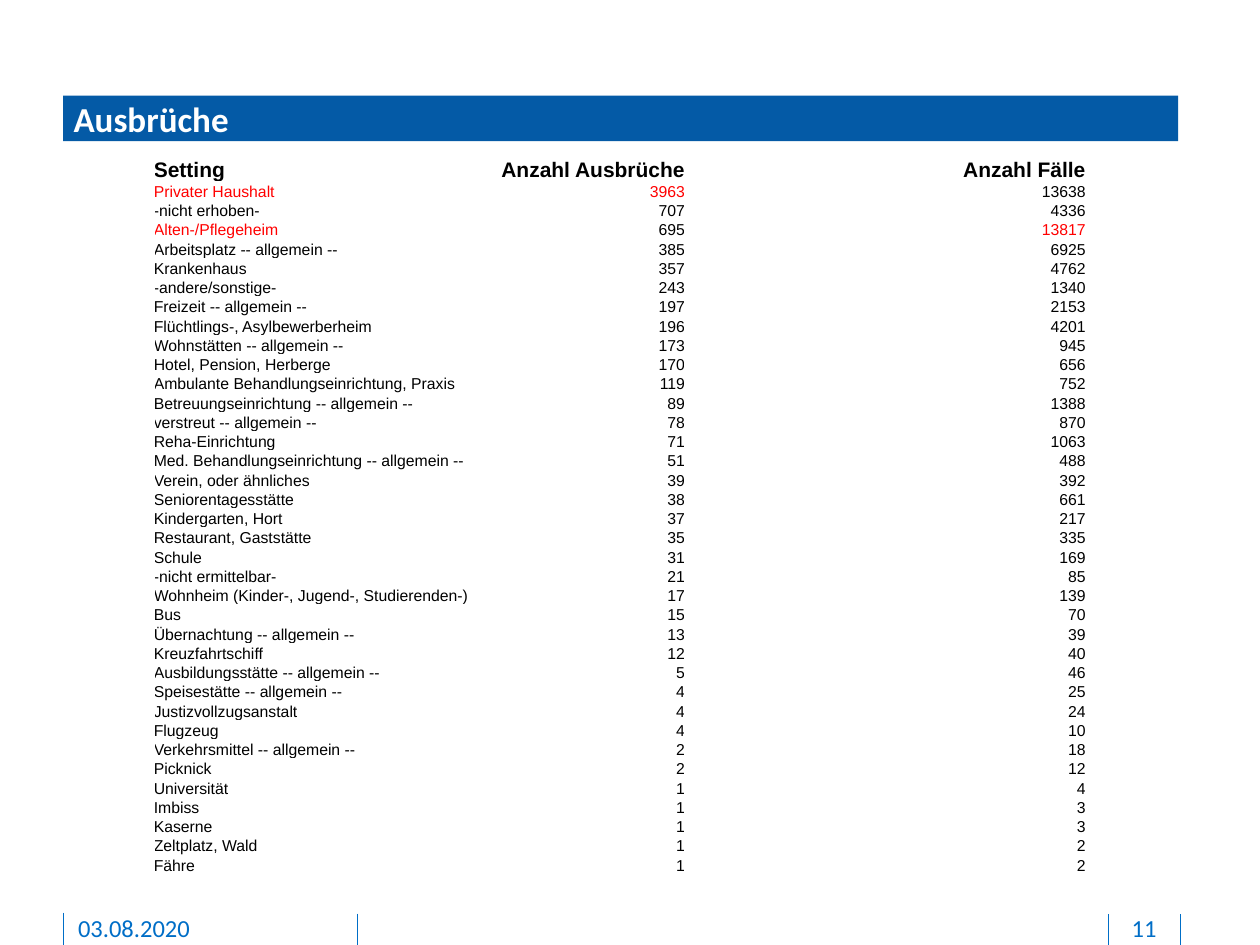
from dataclasses import dataclass

from lxml.etree import SubElement
from pptx import Presentation
from pptx.dml.color import RGBColor
from pptx.enum.shapes import MSO_CONNECTOR as Connector, MSO_SHAPE as Shape
from pptx.enum.text import MSO_ANCHOR as Anchor, PP_ALIGN as Align
from pptx.oxml.ns import qn
from pptx.util import Pt


@dataclass(frozen=True)
class Theme:
    bar: str = "045AA6"
    accent: str = "006EC7"
    light: str = "FFFFFF"
    ink: str = "000000"
    alert: str = "FF0000"
    heading_font: str = "Calibri"
    table_font: str = "Arial"
    title_size: float = 20
    footer_size: float = 14
    header_size: float = 12
    body_size: float = 9
    rule_width: float = 0.5


def write(frame, text, *, font, size, color, bold=False, align=Align.LEFT):
    paragraph = frame.paragraphs[0]
    paragraph.alignment = align
    run = paragraph.add_run()
    run.text = text
    run.font.name = font
    run.font.size = Pt(size)
    run.font.bold = bold
    run.font.color.rgb = RGBColor.from_string(color)


class SlideBuilder:
    def __init__(self, slide, theme):
        self.slide = slide
        self.theme = theme

    def rule(self, x, top, bottom):
        line = self.slide.shapes.add_connector(
            Connector.STRAIGHT, Pt(x), Pt(top), Pt(x), Pt(bottom))
        line.line.color.rgb = RGBColor.from_string(self.theme.accent)
        line.line.width = Pt(self.theme.rule_width)
        SubElement(line._element.spPr, qn("a:effectLst"))

    def title_bar(self, text, *box):
        bar = self.slide.shapes.add_shape(Shape.RECTANGLE, *map(Pt, box))
        bar.shadow.inherit = False
        bar.fill.solid()
        bar.fill.fore_color.rgb = RGBColor.from_string(self.theme.bar)
        bar.line.fill.background()
        self.set_frame(bar.text_frame, left=6, anchor=Anchor.MIDDLE)
        write(bar.text_frame, text, font=self.theme.heading_font,
              size=self.theme.title_size, color=self.theme.light, bold=True)

    def footer(self, text, *box, align=Align.LEFT):
        frame = self.slide.shapes.add_textbox(*map(Pt, box)).text_frame
        self.set_frame(frame, bottom=3.6, anchor=Anchor.TOP)
        write(frame, text, font=self.theme.heading_font,
              size=self.theme.footer_size, color=self.theme.accent, align=align)

    def set_frame(self, frame, *, left=0, bottom=0, anchor):
        frame.word_wrap = True
        frame.margin_left, frame.margin_bottom = Pt(left), Pt(bottom)
        frame.margin_top = frame.margin_right = 0
        frame.vertical_anchor = anchor

    def table(self, rows, left, top, widths, header_height, row_height, alerts):
        heights = [header_height] + [row_height] * (len(rows) - 1)
        table = self.slide.shapes.add_table(
            len(rows), len(widths), Pt(left), Pt(top),
            Pt(sum(widths)), Pt(sum(heights))).table
        table.first_row = table.horz_banding = False
        for column, width in zip(table.columns, widths):
            column.width = Pt(width)
        for r, (values, height) in enumerate(zip(rows, heights)):
            table.rows[r].height = Pt(height)
            for c, value in enumerate(values):
                self.table_cell(table.cell(r, c), str(value), header=r == 0,
                                number=c > 0, alert=(values[0], c) in alerts)

    def table_cell(self, cell, text, *, header, number, alert):
        theme = self.theme
        cell.fill.background()
        cell.margin_left = cell.margin_right = 0
        cell.margin_top = cell.margin_bottom = 0
        cell.vertical_anchor = Anchor.BOTTOM
        write(cell.text_frame, text, font=theme.table_font, bold=header,
              size=theme.header_size if header else theme.body_size,
              color=theme.alert if alert else theme.ink,
              align=Align.RIGHT if number else Align.LEFT)


OUTBREAKS = [
    ("Setting", "Anzahl Ausbrüche", "Anzahl Fälle"),
    ("Privater Haushalt", 3963, 13638),
    ("-nicht erhoben-", 707, 4336),
    ("Alten-/Pflegeheim", 695, 13817),
    ("Arbeitsplatz -- allgemein --", 385, 6925),
    ("Krankenhaus", 357, 4762),
    ("-andere/sonstige-", 243, 1340),
    ("Freizeit -- allgemein --", 197, 2153),
    ("Flüchtlings-, Asylbewerberheim", 196, 4201),
    ("Wohnstätten -- allgemein --", 173, 945),
    ("Hotel, Pension, Herberge", 170, 656),
    ("Ambulante Behandlungseinrichtung, Praxis", 119, 752),
    ("Betreuungseinrichtung -- allgemein --", 89, 1388),
    ("verstreut -- allgemein --", 78, 870),
    ("Reha-Einrichtung", 71, 1063),
    ("Med. Behandlungseinrichtung -- allgemein --", 51, 488),
    ("Verein, oder ähnliches", 39, 392),
    ("Seniorentagesstätte", 38, 661),
    ("Kindergarten, Hort", 37, 217),
    ("Restaurant, Gaststätte", 35, 335),
    ("Schule", 31, 169),
    ("-nicht ermittelbar-", 21, 85),
    ("Wohnheim (Kinder-, Jugend-, Studierenden-)", 17, 139),
    ("Bus", 15, 70),
    ("Übernachtung -- allgemein --", 13, 39),
    ("Kreuzfahrtschiff", 12, 40),
    ("Ausbildungsstätte -- allgemein --", 5, 46),
    ("Speisestätte -- allgemein --", 4, 25),
    ("Justizvollzugsanstalt", 4, 24),
    ("Flugzeug", 4, 10),
    ("Verkehrsmittel -- allgemein --", 2, 18),
    ("Picknick", 2, 12),
    ("Universität", 1, 4),
    ("Imbiss", 1, 3),
    ("Kaserne", 1, 3),
    ("Zeltplatz, Wald", 1, 2),
    ("Fähre", 1, 2),
]
# Highlighted cells: setting and column
ALERTS = {("Privater Haushalt", 0), ("Privater Haushalt", 1),
          ("Alten-/Pflegeheim", 0), ("Alten-/Pflegeheim", 2)}


def main():
    deck = Presentation()
    deck.slide_width, deck.slide_height = Pt(720), Pt(540)
    builder = SlideBuilder(deck.slides.add_slide(deck.slide_layouts[6]), Theme())

    # Footer rules
    for x, top in ((204.5, 522), (36, 521.5), (674.6, 522.5), (633.6, 522.5)):
        builder.rule(x, top, 540)

    # Title
    builder.title_bar("Ausbrüche", 36, 54.7, 637.2, 26)

    # Date and page number
    builder.footer("03.08.2020", 44.6, 521.5, 146, 15)
    builder.footer("11", 634.3, 521.5, 39, 15, align=Align.CENTER)

    # Outbreaks by setting
    builder.table(OUTBREAKS, left=87.9, top=82.8, widths=(182, 121.5, 229),
                  header_height=21, row_height=11, alerts=ALERTS)

    deck.save("out.pptx")


if __name__ == "__main__":
    main()
